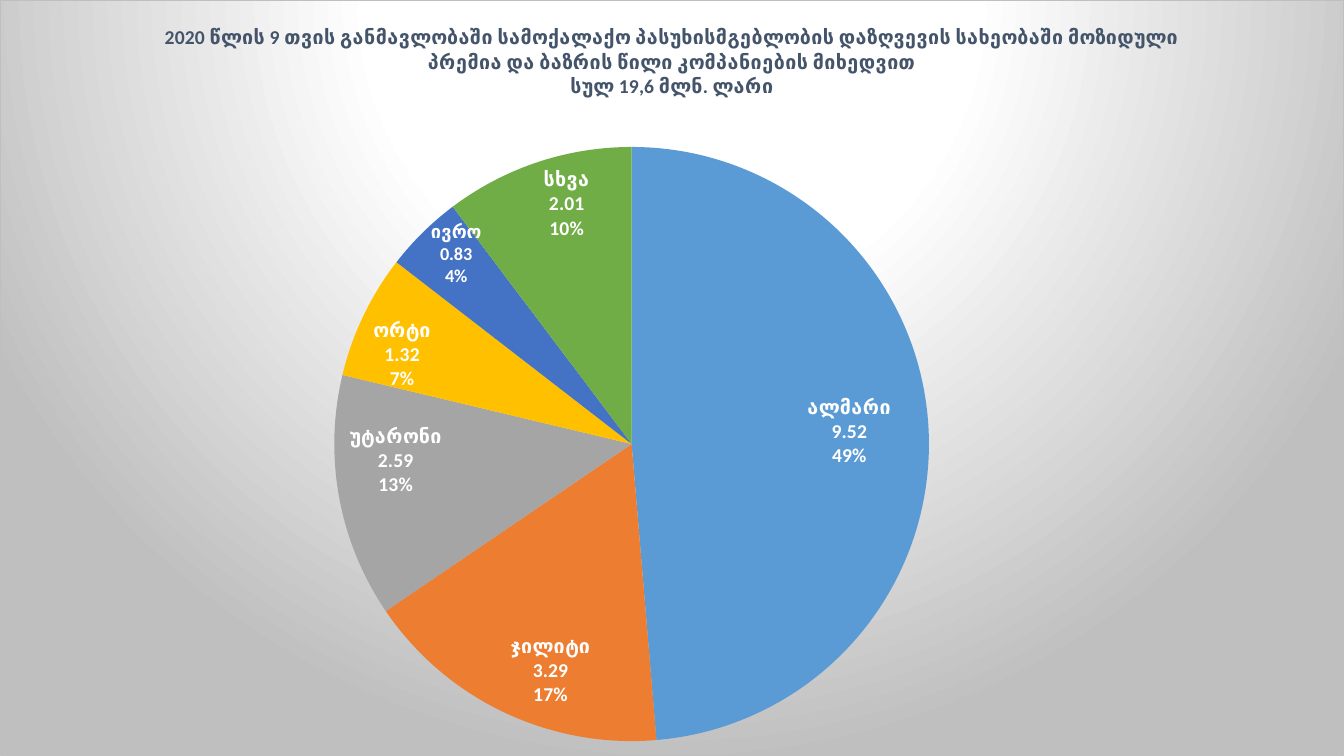
import pptx
import pptx.chart.data
import pptx.dml.color
import pptx.enum.chart
import pptx.oxml
import pptx.oxml.ns
import pptx.util

COLORS = {"heading": "44546A", "label": "FFFFFF", "border": "BFBFBF",
          "center": "FFFFFF", "edge": "BFBFBF"}
# Company, premium in millions of lari, slice colour
COMPANIES = [(" ალმარი ", 9.52, "5B9BD5"), (" ჯილიტი ", 3.29, "ED7D31"),
             (" უტარონი ", 2.59, "A5A5A5"), (" ორტი ", 1.32, "FFC000"),
             (" ივრო ", 0.83, "4472C4"), (" სხვა ", 2.01, "70AD47")]
HEADING = ["2020 წლის 9 თვის განმავლობაში სამოქალაქო პასუხისმგებლობის დაზღვევის "
           "სახეობაში მოზიდული პრემია და ბაზრის წილი კომპანიების მიხედვით",
           "სულ 19,6 მლნ. ლარი"]
PIE_SHARE = {"x": 0.2485, "y": 0.194, "w": 0.443, "h": 0.787}
# Slice index: label size, shift across and down as shares of the chart
MOVED_LABELS = {0: (14, -0.02, 0), 4: (13, 0, -0.02)}
qn = pptx.oxml.ns.qn
NAMESPACES = pptx.oxml.ns.nsdecls("c", "a")


def style_font(font, size, color):
    font.name = "Calibri"
    font.size = pptx.util.Pt(size)
    font.bold = True
    font.color.rgb = pptx.dml.color.RGBColor.from_string(COLORS[color])


def manual_layout(settings):
    """Layout element from pairs of tag and value."""
    parts = "".join(f'<c:{tag} val="{value}"/>' for tag, value in settings.items())
    return pptx.oxml.parse_xml(f"<c:layout {NAMESPACES}><c:manualLayout>{parts}"
                               "</c:manualLayout></c:layout>")


def fill_background(chart):
    """Radial gradient and thin border behind the whole chart."""
    stops = "".join(
        f'<a:gs pos="{share * 1000}"><a:srgbClr val="{COLORS[name]}"/></a:gs>'
        for share, name in [(0, "center"), (39, "center"), (100, "edge")])
    background = pptx.oxml.parse_xml(
        f'<c:spPr {NAMESPACES}><a:gradFill><a:gsLst>{stops}</a:gsLst>'
        '<a:path path="circle"><a:fillToRect l="50000" t="-80000" r="50000" b="180000"/>'
        f'</a:path></a:gradFill><a:ln w="{pptx.util.Pt(0.75)}"><a:solidFill>'
        f'<a:srgbClr val="{COLORS["border"]}"/></a:solidFill></a:ln></c:spPr>')
    chart.element.find(qn("c:chart")).addnext(background)


def place_pie(chart):
    """Set the pie's inner area as shares of the chart."""
    plot_area = chart.element.find(".//" + qn("c:plotArea"))
    for old_layout in plot_area.findall(qn("c:layout")):
        plot_area.remove(old_layout)
    plot_area.insert(0, manual_layout(
        {"layoutTarget": "inner", "xMode": "edge", "yMode": "edge"} | PIE_SHARE))


def add_heading(chart):
    frame = chart.chart_title.text_frame
    chart.chart_title.include_in_layout = False
    for index, line in enumerate(HEADING):
        para = frame.paragraphs[0] if index == 0 else frame.add_paragraph()
        para.text = line
        style_font(para.font, 14, "heading")


def style_label(label, size):
    style_font(label.font, size, "label")
    label.position = pptx.enum.chart.XL_LABEL_POSITION.INSIDE_END


def show_three_lines(element):
    """Company, premium and share, one below the other."""
    for flag in ["showVal", "showCatName", "showPercent"]:
        element.find(qn(f"c:{flag}")).set("val", "1")
    element.find(qn("c:showBubbleSize")).addnext(
        pptx.oxml.parse_xml(f"<c:separator {NAMESPACES}>\n</c:separator>"))


def label_slices(series):
    style_label(series.data_labels, 14)
    for index, (size, _, _) in MOVED_LABELS.items():
        style_label(series.points[index].data_label, size)
    group = series.data_labels._element
    show_three_lines(group)
    for element, (_, across, down) in zip(group.findall(qn("c:dLbl")),
                                          MOVED_LABELS.values()):
        show_three_lines(element)
        element.find(qn("c:idx")).addnext(manual_layout({"x": across, "y": down}))


def add_market_chart(page, left, top, width, height):
    data = pptx.chart.data.CategoryChartData(number_format="#,##0.00")
    data.categories = [name for name, _, _ in COMPANIES]
    data.add_series("Series 1", [premium for _, premium, _ in COMPANIES])
    chart = page.shapes.add_chart(
        pptx.enum.chart.XL_CHART_TYPE.PIE, left, top, width, height, data).chart
    chart.has_legend = False
    chart.font.name = "Calibri"
    chart.font.size = pptx.util.Pt(10)
    add_heading(chart)
    fill_background(chart)
    place_pie(chart)
    series = chart.plots[0].series[0]
    for index, (_, _, color) in enumerate(COMPANIES):
        fill = series.points[index].format.fill
        fill.solid()
        fill.fore_color.rgb = pptx.dml.color.RGBColor.from_string(color)
    label_slices(series)


def main():
    deck = pptx.Presentation()
    deck.slide_width = pptx.util.Inches(13.33)
    deck.slide_height = pptx.util.Inches(7.5)
    page = deck.slides.add_slide(deck.slide_layouts[6])
    add_market_chart(page, 0, 0, deck.slide_width, deck.slide_height)
    deck.save("out.pptx")


if __name__ == "__main__":
    main()
